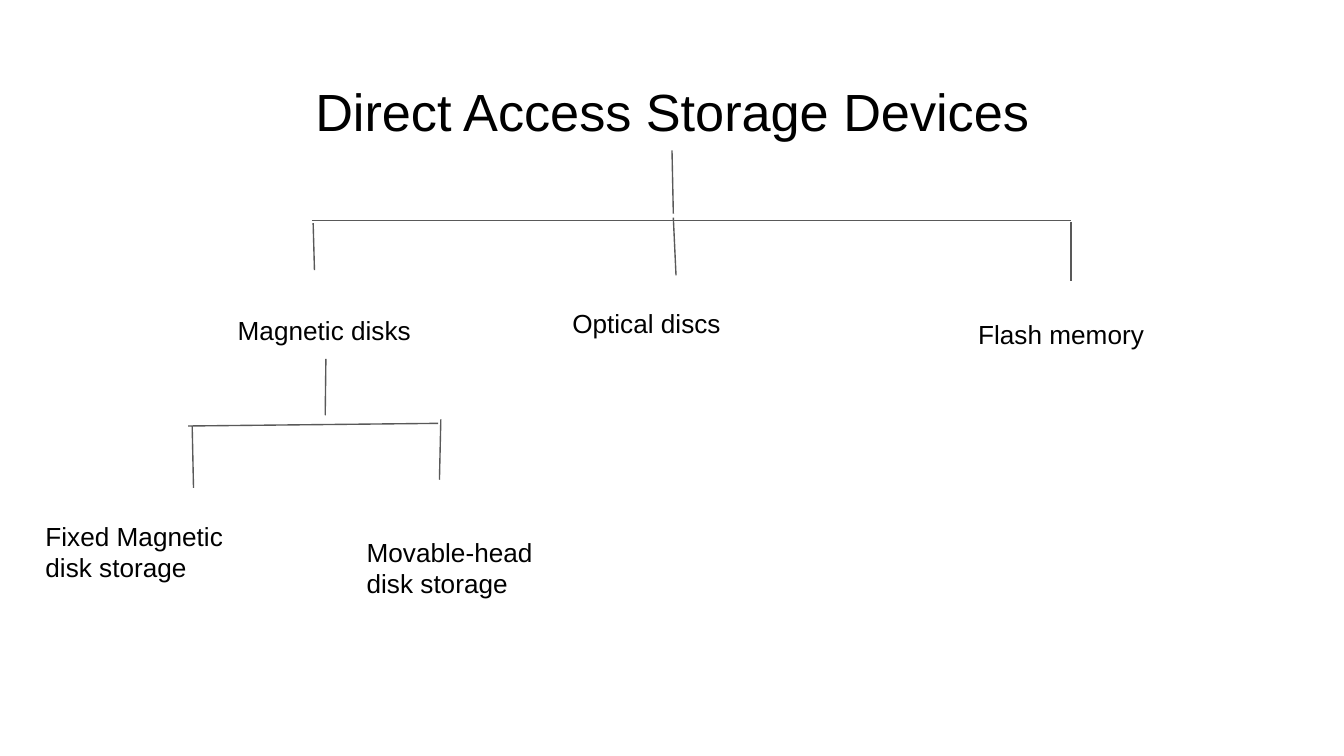
from typing import NamedTuple, Optional

from lxml import etree
from pptx import Presentation
from pptx.dml.color import RGBColor
from pptx.enum.shapes import MSO_CONNECTOR
from pptx.enum.text import MSO_ANCHOR, MSO_AUTO_SIZE, PP_ALIGN
from pptx.oxml.ns import qn
from pptx.util import Inches, Pt

STRAIGHT = MSO_CONNECTOR.STRAIGHT
TOP = MSO_ANCHOR.TOP
NO_AUTO_SIZE = MSO_AUTO_SIZE.NONE
LEFT, CENTER = PP_ALIGN.LEFT, PP_ALIGN.CENTER

BLACK = RGBColor(0x00, 0x00, 0x00)
WHITE = RGBColor(0xFF, 0xFF, 0xFF)
GRAY = RGBColor(0x59, 0x59, 0x59)
FONT = "Arial"
BOTTOM_SITE = 2
SLIDE_WIDTH = Inches(10)
SLIDE_HEIGHT = SLIDE_WIDTH * 9 // 16  # widescreen


class Label(NamedTuple):
    text: str
    left: float
    top: float
    width: float
    height: float


class Branch(NamedTuple):
    x1: float
    y1: float
    x2: float
    y2: float
    parent: Optional[str] = None  # label whose bottom the line starts from


TITLE = Label("Direct Access Storage Devices", 0.34, 0.49, 9.32, 0.63)
LABELS = [
    Label("Magnetic disks", 1.67, 2.24, 1.51, 0.43),
    Label("Optical discs", 4.16, 2.19, 1.8, 0.44),
    Label("Flash memory", 7.18, 2.27, 1.6, 0.63),
    Label("Fixed Magnetic disk storage", 0.24, 3.77, 1.8, 0.63),
    Label("Movable-head disk storage", 2.63, 3.89, 1.6, 0.35),
]
BRANCHES = [
    # Title to the three device types
    Branch(5, 1.11, 5.01, 1.59, TITLE.text),
    Branch(2.32, 1.64, 7.97, 1.64),
    Branch(2.33, 1.66, 2.34, 2.01),
    Branch(5.01, 1.62, 5.03, 2.05),
    Branch(7.97, 1.65, 7.97, 2.09),
    # Magnetic disks to its two kinds
    Branch(2.43, 2.67, 2.42, 3.09, "Magnetic disks"),
    Branch(1.4, 3.17, 3.26, 3.15),
    Branch(1.43, 3.17, 1.44, 3.63),
    Branch(3.28, 3.12, 3.27, 3.57),
]


def write_label(shape, label: Label, size: int, alignment) -> None:
    """Place a shape and give it the label's text."""
    shape.left, shape.top = Inches(label.left), Inches(label.top)
    shape.width, shape.height = Inches(label.width), Inches(label.height)
    frame = shape.text_frame
    frame.word_wrap = True
    frame.auto_size = NO_AUTO_SIZE
    frame.vertical_anchor = TOP
    frame.margin_left = frame.margin_right = Inches(0.1)
    frame.margin_top = frame.margin_bottom = Inches(0.1)
    paragraph = frame.paragraphs[0]
    paragraph.alignment = alignment
    paragraph.line_spacing = 1.0
    paragraph.space_before = Pt(0)
    run = paragraph.add_run()
    run.text = label.text
    run.font.name = FONT
    run.font.size = Pt(size)
    run.font.color.rgb = BLACK


def draw_branch(slide, branch: Branch, shapes: dict) -> None:
    """Draw one line of the tree, joined to its parent if it has one."""
    connector = slide.shapes.add_connector(
        STRAIGHT, Inches(branch.x1), Inches(branch.y1),
        Inches(branch.x2), Inches(branch.y2))
    connector.line.color.rgb = GRAY
    connector.line.width = Pt(0.75)
    etree.SubElement(connector._element.spPr, qn("a:effectLst"))
    if branch.parent:
        connector.begin_connect(shapes[branch.parent], BOTTOM_SITE)


def main() -> None:
    presentation = Presentation()
    presentation.slide_width = SLIDE_WIDTH
    presentation.slide_height = SLIDE_HEIGHT
    slide = presentation.slides.add_slide(presentation.slide_layouts[5])
    slide.background.fill.solid()
    slide.background.fill.fore_color.rgb = WHITE

    # Title
    title = slide.shapes.title
    write_label(title, TITLE, 28, CENTER)
    shapes = {TITLE.text: title}

    # Device names
    for label in LABELS:
        box = slide.shapes.add_textbox(0, 0, 0, 0)
        write_label(box, label, 14, LEFT)
        shapes[label.text] = box

    # Tree lines
    for branch in BRANCHES:
        draw_branch(slide, branch, shapes)

    presentation.save("out.pptx")


if __name__ == "__main__":
    main()
